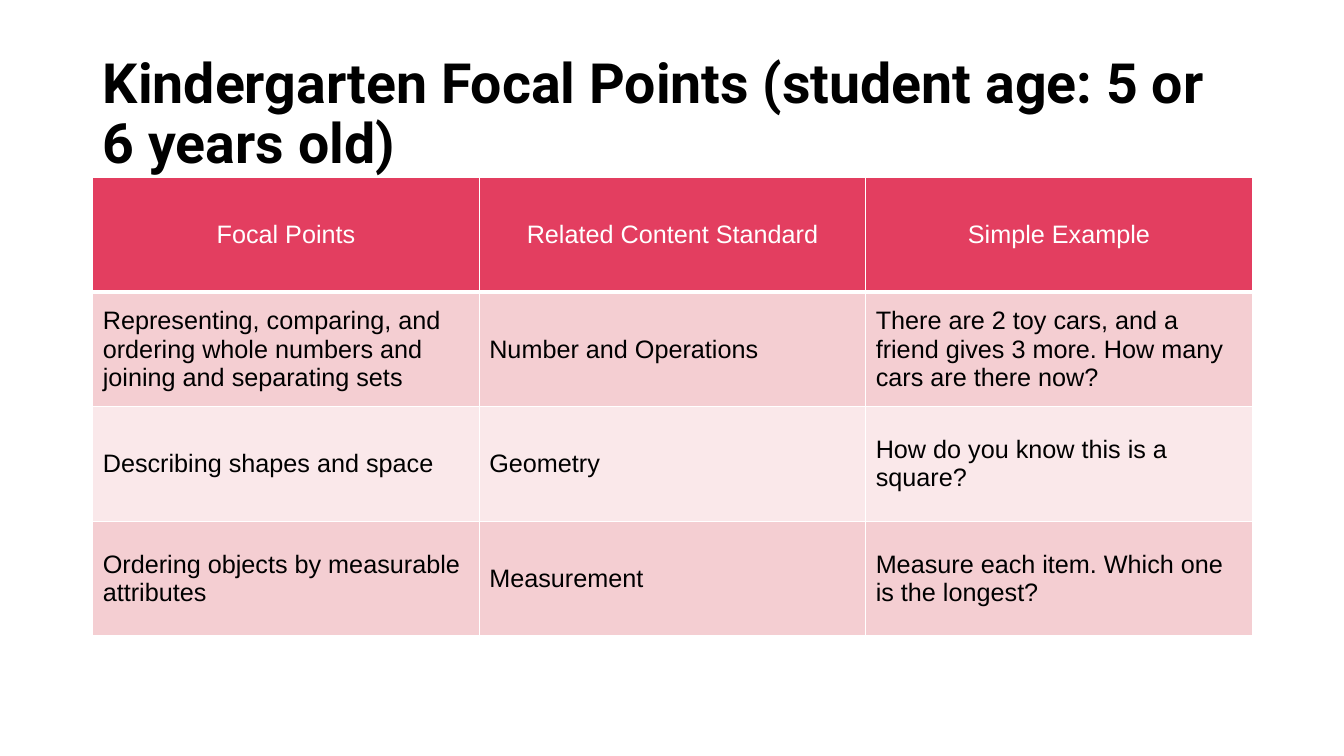
from dataclasses import dataclass

from lxml import etree
from pptx import Presentation
from pptx.dml.color import RGBColor
from pptx.enum.text import MSO_ANCHOR, MSO_AUTO_SIZE, PP_ALIGN
from pptx.oxml.ns import qn
from pptx.util import Inches, Pt

LEFT, CENTER = PP_ALIGN.LEFT, PP_ALIGN.CENTER
MIDDLE = MSO_ANCHOR.MIDDLE
NO_AUTOFIT = MSO_AUTO_SIZE.NONE


@dataclass(frozen=True)
class Theme:
    black: str = "000000"
    white: str = "FFFFFF"
    header: str = "E33E60"
    bands: tuple = ("F4CED2", "FAE8EA")
    title_font: str = "Roboto"
    body_font: str = "Arial"
    title_size: float = 39.6
    body_size: float = 18


theme = Theme()


def write(tf, text, font=theme.body_font, size=theme.body_size,
          color=theme.black, bold=False, align=LEFT, spacing=1.0):
    p = tf.paragraphs[0]
    p.alignment = align
    p.line_spacing = spacing
    r = p.add_run()
    r.text = text
    r.font.name = font
    r.font.size = Pt(size)
    r.font.bold = bold
    r.font.color.rgb = RGBColor.from_string(color)


def add_borders(cell, color, widths):
    tc_pr = cell._tc.get_or_add_tcPr()
    for side, width in zip("LRTB", widths):
        ln = etree.SubElement(tc_pr, qn(f"a:ln{side}"), w=str(Pt(width)))
        fill = etree.SubElement(ln, qn("a:solidFill"))
        etree.SubElement(fill, qn("a:srgbClr"), val=color)


prs = Presentation()
prs.slide_width, prs.slide_height = Inches(13.33), Inches(7.5)
slide = prs.slides.add_slide(prs.slide_layouts[5])

# Title
title = slide.shapes.title
title.left, title.top = Inches(0.92), Inches(0.66)
title.width, title.height = Inches(11.5), Inches(0.97)
tf = title.text_frame
tf.word_wrap = True
tf.auto_size = NO_AUTOFIT
tf.vertical_anchor = MIDDLE
write(tf, "Kindergarten Focal Points (student age: 5 or 6 years old)",
      font=theme.title_font, size=theme.title_size, bold=True, spacing=0.9)

# Focal points table: header row, then banded rows
rows = [
    ("Focal Points", "Related Content Standard", "Simple Example"),
    ("Representing, comparing, and ordering whole numbers and joining and separating sets",
     "Number and Operations",
     "There are 2 toy cars, and a friend gives 3 more. How many cars are there now?"),
    ("Describing shapes and space", "Geometry",
     "How do you know this is a square?"),
    ("Ordering objects by measurable attributes", "Measurement",
     "Measure each item. Which one is the longest?"),
]
table = slide.shapes.add_table(len(rows), len(rows[0]), Inches(0.92), Inches(1.76),
                               Inches(11.5), Inches(4.55)).table

for i, row in enumerate(rows):
    is_header = i == 0
    for j, text in enumerate(row):
        cell = table.cell(i, j)
        cell.vertical_anchor = MIDDLE
        add_borders(cell, theme.white, (1, 1, 1, 3 if is_header else 1))
        cell.fill.solid()
        cell.fill.fore_color.rgb = RGBColor.from_string(
            theme.header if is_header else theme.bands[(i - 1) % 2])
        write(cell.text_frame, text,
              color=theme.white if is_header else theme.black,
              align=CENTER if is_header else LEFT)

prs.save("out.pptx")
